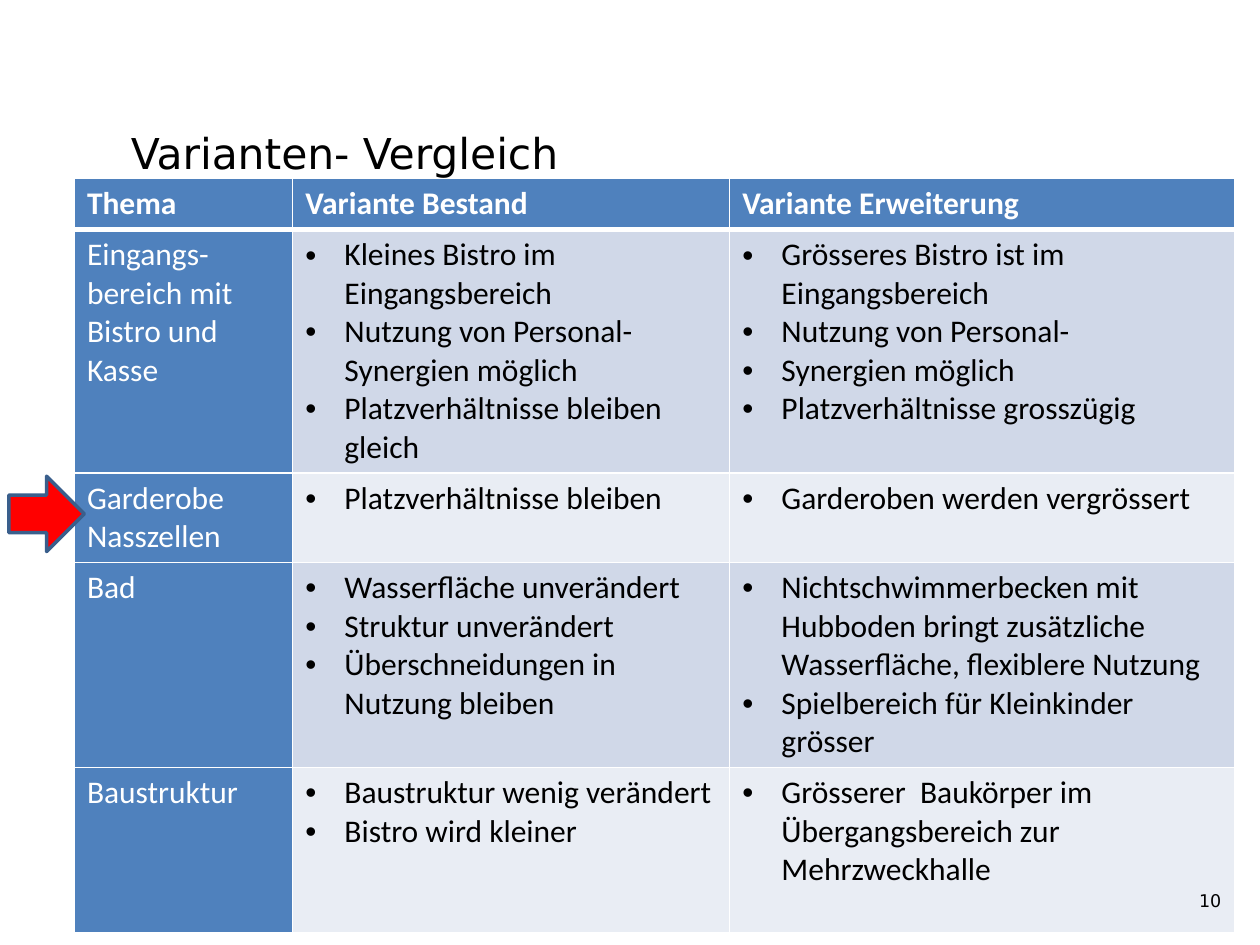
from dataclasses import dataclass

import pptx
import pptx.dml.color
import pptx.enum.shapes
import pptx.enum.text
import pptx.oxml
import pptx.oxml.ns
import pptx.util
from pptx.util import Cm

COLORS = {
    "white": "FFFFFF",
    "black": "000000",
    "blue": "4F81BD",
    "band_dark": "D0D8E8",
    "band_light": "E9EDF4",
    "red": "FF0000",
    "arrow_line": "3A5F8C",
}
HEADINGS = ["Thema", "Variante Bestand", "Variante Erweiterung"]
COLUMN_WIDTHS = [4.4, 8.81, 10.18]
HEADER_HEIGHT = 0.97
BULLET_INDENT = Cm(0.79)


@dataclass
class Topic:
    height: float
    label: list[str]
    existing: list[str]
    extension: list[str]


@dataclass
class Label:
    text: str
    left: float
    top: float
    width: float
    height: float
    size: float
    alignment: pptx.enum.text.PP_ALIGN


TOPICS = [
    Topic(
        4.62,
        ["Eingangs-bereich mit", "Bistro und", "Kasse"],
        ["Kleines Bistro im Eingangsbereich",
         "Nutzung von Personal- Synergien möglich",
         "Platzverhältnisse bleiben gleich"],
        ["Grösseres Bistro ist im Eingangsbereich", "Nutzung von Personal-",
         "Synergien möglich", "Platzverhältnisse grosszügig"],
    ),
    Topic(
        1.7,
        ["Garderobe Nasszellen"],
        ["Platzverhältnisse bleiben"],
        ["Garderoben werden vergrössert"],
    ),
    Topic(
        3.89,
        ["Bad"],
        ["Wasserfläche unverändert", "Struktur unverändert",
         "Überschneidungen in Nutzung bleiben"],
        ["Nichtschwimmerbecken mit  Hubboden bringt zusätzliche Wasserfläche, "
         "flexiblere Nutzung",
         "Spielbereich für Kleinkinder grösser"],
    ),
    Topic(
        3.33,
        ["Baustruktur"],
        ["Baustruktur wenig verändert", "Bistro wird kleiner"],
        ["Grösserer  Baukörper im Übergangsbereich zur Mehrzweckhalle"],
    ),
]
LABELS = [
    Label("Varianten- Vergleich", 2.39, 2.35, 22.5, 1.45, 24.3,
          pptx.enum.text.PP_ALIGN.LEFT),
    Label("10", 18.95, 17.65, 5.92, 1.02, 10, pptx.enum.text.PP_ALIGN.RIGHT),
]


def rgb(name: str) -> pptx.dml.color.RGBColor:
    return pptx.dml.color.RGBColor.from_string(COLORS[name])


def format_font(paragraph, color: str, **values) -> None:
    for attribute, value in values.items():
        setattr(paragraph.font, attribute, value)
    paragraph.font.color.rgb = rgb(color)


def add_bullet(paragraph) -> None:
    properties = paragraph._p.get_or_add_pPr()
    properties.set("marL", str(BULLET_INDENT))
    properties.set("indent", str(-BULLET_INDENT))
    namespace = pptx.oxml.ns.nsdecls("a")
    for xml in (f'<a:buFont {namespace} typeface="Arial"/>',
                f'<a:buChar {namespace} char="•"/>'):
        properties.append(pptx.oxml.parse_xml(xml))


def set_borders(cell, top: float, bottom: float) -> None:
    """Give the cell white borders; widths are in points, 1 at the sides."""
    properties = cell._tc.get_or_add_tcPr()
    sides = {"L": 1, "R": 1, "T": top, "B": bottom}
    for index, (side, width) in enumerate(sides.items()):
        properties.insert(index, pptx.oxml.parse_xml(
            f'<a:ln{side} {pptx.oxml.ns.nsdecls("a")} w="{pptx.util.Pt(width)}">'
            f'<a:solidFill><a:srgbClr val="{COLORS["white"]}"/></a:solidFill>'
            f'</a:ln{side}>'))


def fill_cell(cell, lines: list[str], fill: str, color: str,
              bold: bool = False, bulleted: bool = False) -> None:
    cell.fill.solid()
    cell.fill.fore_color.rgb = rgb(fill)
    frame = cell.text_frame
    for index, line in enumerate(lines):
        paragraph = frame.add_paragraph() if index else frame.paragraphs[0]
        paragraph.text = line
        if bulleted:
            add_bullet(paragraph)
        format_font(paragraph, color, name="Calibri",
                    size=pptx.util.Pt(18), bold=bold)


def add_comparison(slide) -> None:
    heights = [HEADER_HEIGHT] + [topic.height for topic in TOPICS]
    table = slide.shapes.add_table(
        len(heights), len(HEADINGS), Cm(1.5), Cm(3.6),
        Cm(sum(COLUMN_WIDTHS)), Cm(sum(heights))).table
    for column, width in zip(table.columns, COLUMN_WIDTHS):
        column.width = Cm(width)
    for row, height in zip(table.rows, heights):
        row.height = Cm(height)

    for column, heading in enumerate(HEADINGS):
        fill_cell(table.cell(0, column), [heading], "blue", "white", bold=True)
    for row, topic in enumerate(TOPICS, start=1):
        band = "band_dark" if row % 2 else "band_light"
        fill_cell(table.cell(row, 0), topic.label, "blue", "white")
        for column, points in enumerate((topic.existing, topic.extension), start=1):
            fill_cell(table.cell(row, column), points, band, "black", bulleted=True)
    for index, row in enumerate(table.rows):
        for cell in row.cells:
            set_borders(cell, top=3 if index == 1 else 1,
                        bottom=3 if index == 0 else 1)


def add_label(slide, label: Label) -> None:
    shape = slide.shapes.add_textbox(
        Cm(label.left), Cm(label.top), Cm(label.width), Cm(label.height))
    frame = shape.text_frame
    frame.word_wrap = True
    frame.vertical_anchor = pptx.enum.text.MSO_ANCHOR.MIDDLE
    paragraph = frame.paragraphs[0]
    paragraph.text = label.text
    paragraph.alignment = label.alignment
    format_font(paragraph, "black", name="DejaVu Sans",
                size=pptx.util.Pt(label.size))


def add_arrow(slide) -> None:
    arrow = slide.shapes.add_shape(
        pptx.enum.shapes.MSO_SHAPE.RIGHT_ARROW,
        Cm(0.18), Cm(9.6), Cm(1.52), Cm(1.52))
    arrow.shadow.inherit = False
    arrow.fill.solid()
    arrow.fill.fore_color.rgb = rgb("red")
    arrow.line.color.rgb = rgb("arrow_line")
    arrow.line.width = pptx.util.Pt(2)


def main() -> None:
    presentation = pptx.Presentation()
    presentation.slide_width = Cm(25.4)
    presentation.slide_height = Cm(19.05)
    slide = presentation.slides.add_slide(presentation.slide_layouts[6])
    add_comparison(slide)
    for label in LABELS:
        add_label(slide, label)
    add_arrow(slide)
    presentation.save("out.pptx")


if __name__ == "__main__":
    main()
